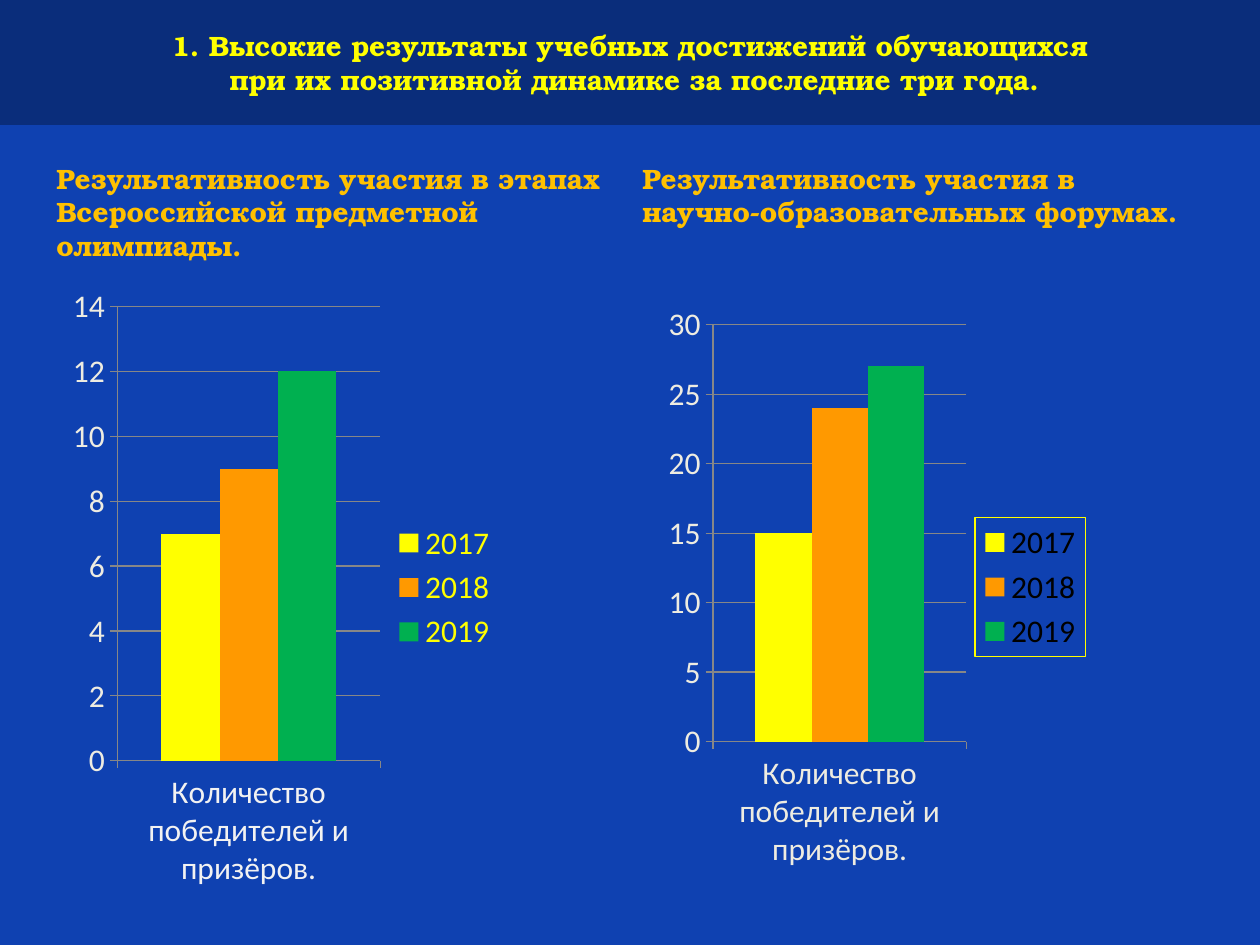
from lxml import etree
from pptx import Presentation
from pptx.chart.data import CategoryChartData
from pptx.dml.color import RGBColor
from pptx.enum.chart import XL_CHART_TYPE, XL_LEGEND_POSITION, XL_TICK_MARK
from pptx.enum.text import MSO_ANCHOR, MSO_AUTO_SIZE, PP_ALIGN
from pptx.oxml import parse_xml
from pptx.oxml.ns import nsdecls, qn
from pptx.util import Pt

COLUMNS = XL_CHART_TYPE.COLUMN_CLUSTERED
RIGHT = XL_LEGEND_POSITION.RIGHT
OUTSIDE = XL_TICK_MARK.OUTSIDE
MIDDLE = MSO_ANCHOR.MIDDLE
CENTER = PP_ALIGN.CENTER
NO_AUTOFIT = MSO_AUTO_SIZE.NONE
FIT_SHAPE = MSO_AUTO_SIZE.SHAPE_TO_FIT_TEXT
SCALE = 914400 / 126
YEARS = {"2017": "FFFF00", "2018": "FF9900", "2019": "00B050"}


def box(*lengths):
    return [round(length * SCALE) for length in lengths]


def color(value):
    return RGBColor.from_string(value)


presentation = Presentation()
presentation.slide_width, presentation.slide_height = box(1260, 945)
slide = presentation.slides.add_slide(presentation.slide_layouts[5])
slide.background.fill.solid()
slide.background.fill.fore_color.rgb = color("0F41B1")

title = slide.shapes.title
title.left, title.top, title.width, title.height = box(0, 0, 1260, 125)
title.fill.solid()
title.fill.fore_color.rgb = color("000000")
solid_color = title.fill.fore_color._xFill.find(qn("a:srgbClr"))
etree.SubElement(solid_color, qn("a:alpha")).set("val", "30000")
title.text_frame.text = (
    "1. Высокие результаты учебных достижений обучающихся\v"
    " при их позитивной динамике за последние три года."
)
title.text_frame.vertical_anchor = MIDDLE
title.text_frame.auto_size = NO_AUTOFIT
title.text_frame.paragraphs[0].alignment = CENTER
headings = [(title, "FFFF00")]

for text, bounds in [
    ("Результативность участия в этапах Всероссийской предметной олимпиады.", (44, 155, 605, 115)),
    ("Результативность участия в научно-образовательных форумах.", (630, 155, 566, 81)),
]:
    heading = slide.shapes.add_textbox(*box(*bounds))
    heading.text_frame.word_wrap = True
    heading.text_frame.auto_size = FIT_SHAPE
    heading.text_frame.text = text
    headings.append((heading, "FFC000"))

for heading, text_color in headings:
    font = heading.text_frame.paragraphs[0].font
    font.name = "TeX Gyre Bonum"
    font.size = Pt(16)
    font.bold = True
    font.color.rgb = color(text_color)

for bounds, values, category_color, legend_color, legend_border in [
    ((64, 275, 446, 625), (7, 9, 12), "F2F2F2", "FFFF00", None),
    ((660, 294, 436, 586), (15, 24, 27), "EEECE1", "000000", "FFFF00"),
]:
    chart_data = CategoryChartData()
    chart_data.categories = ["Количество победителей и призёров."]
    for year, value in zip(YEARS, values):
        chart_data.add_series(year, [value])
    chart = slide.shapes.add_chart(COLUMNS, *box(*bounds), chart_data).chart
    chart.has_title = False
    chart.font.name = "Calibri"
    chart.font.size = Pt(18)

    plot = chart.plots[0]
    plot.gap_width = 150
    plot.vary_by_categories = False
    for series, fill_color in zip(plot.series, YEARS.values()):
        series.format.fill.solid()
        series.format.fill.fore_color.rgb = color(fill_color)

    lines = [chart.value_axis.major_gridlines.format.line]
    for axis, label_color in [(chart.category_axis, category_color), (chart.value_axis, "EEECE1")]:
        axis.major_tick_mark = OUTSIDE
        axis.tick_labels.font.size = Pt(18)
        axis.tick_labels.font.color.rgb = color(label_color)
        lines.append(axis.format.line)
    for line in lines:
        line.color.rgb = color("878787")
        line.width = Pt(0.75)

    chart.has_legend = True
    legend = chart.legend
    legend.position = RIGHT
    legend.include_in_layout = False
    legend.font.size = Pt(18)
    legend.font.color.rgb = color(legend_color)
    if legend_border:
        border = parse_xml(
            f'<c:spPr {nsdecls("c", "a")}><a:ln w="9525"><a:solidFill>'
            f'<a:srgbClr val="{legend_border}"/></a:solidFill></a:ln></c:spPr>'
        )
        legend._element.find(qn("c:txPr")).addprevious(border)

presentation.save("out.pptx")
